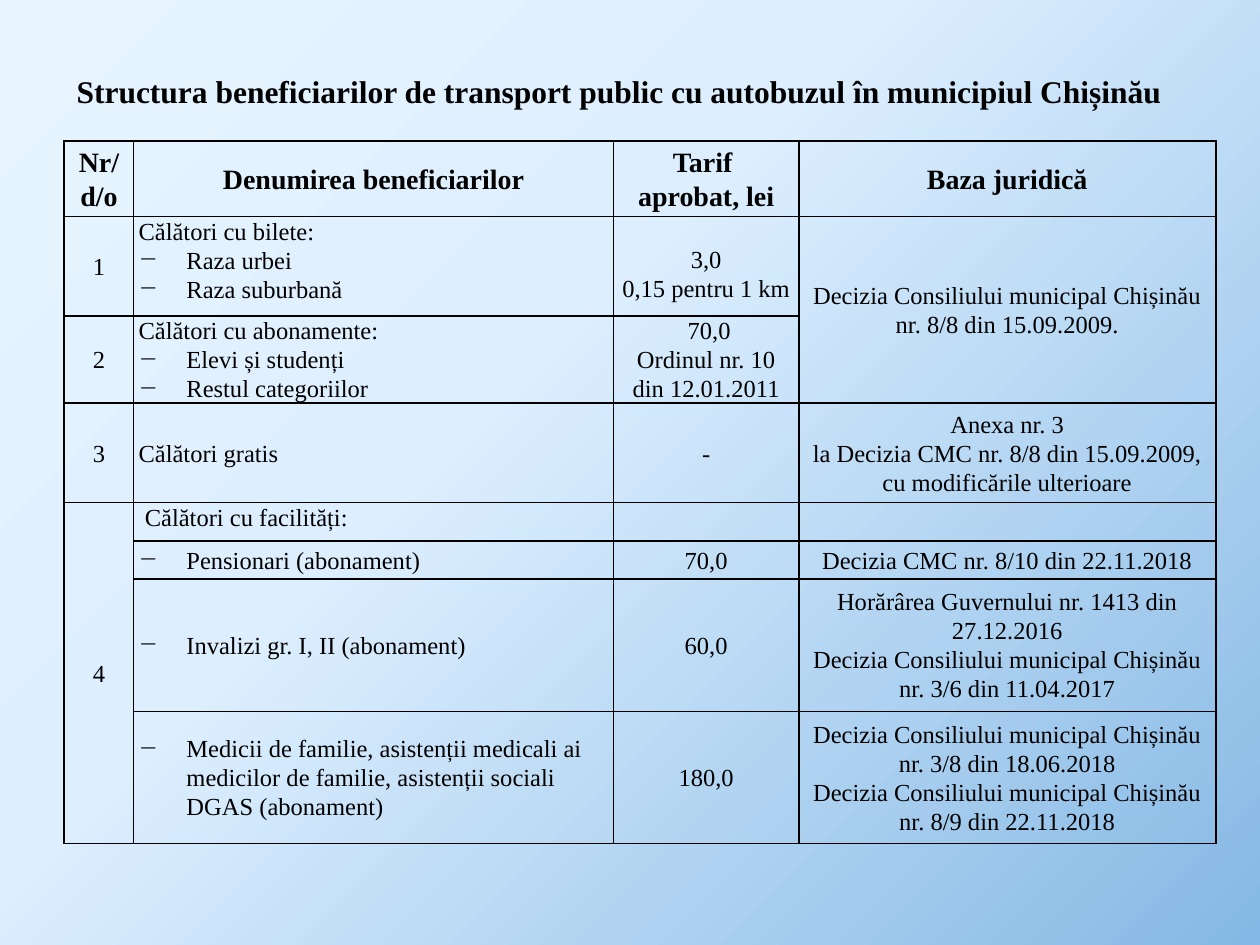
from dataclasses import dataclass

from lxml.etree import SubElement
from pptx import Presentation
from pptx.dml.color import RGBColor
from pptx.enum.text import MSO_ANCHOR as Anchor, MSO_AUTO_SIZE as AutoSize, PP_ALIGN as Align
from pptx.oxml import parse_xml
from pptx.oxml.ns import nsdecls, qn
from pptx.util import Inches, Pt


@dataclass(frozen=True)
class Theme:
    font: str = "Times New Roman"
    ink: str = "000000"
    gradient: tuple = ((0, "E8F4FF"), (40, "DDEFFF"), (100, "85B8E4"))
    title_size: int = 18
    header_size: int = 16
    body_size: int = 14
    border: float = 1
    line_spacing: float = 1.07
    cell_margin: float = 0.04
    bullet: str = "−"
    bullet_indent: float = 0.38


class SlideBuilder:
    def __init__(self, page, theme):
        self.page = page
        self.theme = theme

    def background(self):
        """Circular gradient centred beyond the top left corner."""
        self.page.background.fill.gradient()
        gradient = self.page.element.find(".//" + qn("a:gradFill"))
        stops = "".join(
            f'<a:gs pos="{place * 1000}"><a:srgbClr val="{color}"/></a:gs>'
            for place, color in self.theme.gradient)
        gradient.getparent().replace(gradient, parse_xml(
            f'<a:gradFill {nsdecls("a")} rotWithShape="1"><a:gsLst>{stops}</a:gsLst>'
            '<a:path path="circle"><a:fillToRect l="-24000" t="-20000" r="124000" b="120000"/>'
            '</a:path></a:gradFill>'))

    def style(self, para, size, bold=False):
        for span in para.runs:
            span.font.name = self.theme.font
            span.font.size = Pt(size)
            span.font.bold = bold
            span.font.color.rgb = RGBColor.from_string(self.theme.ink)

    def title(self, text, left, top, width, height):
        box = self.page.shapes.add_textbox(
            Inches(left), Inches(top), Inches(width), Inches(height))
        frame = box.text_frame
        frame.word_wrap = False
        frame.auto_size = AutoSize.SHAPE_TO_FIT_TEXT
        frame.text = text
        self.style(frame.paragraphs[0], self.theme.title_size, True)

    def table(self, left, top, widths, heights):
        frame = self.page.shapes.add_table(
            len(heights), len(widths), Inches(left), Inches(top),
            Inches(sum(widths)), Inches(sum(heights)))
        table = frame.table
        table.first_row = table.horz_banding = False
        for column, width in zip(table.columns, widths):
            column.width = Inches(width)
        for row, height in zip(table.rows, heights):
            row.height = Inches(height)
        for cell in table.iter_cells():
            self.frame_cell(cell)
        return table

    def frame_cell(self, cell):
        cell.fill.background()
        cell.margin_left = cell.margin_right = Inches(self.theme.cell_margin)
        cell.margin_top = cell.margin_bottom = 0
        cell.vertical_anchor = Anchor.MIDDLE
        props = cell._tc.get_or_add_tcPr()
        for place, side in enumerate(("lnL", "lnR", "lnT", "lnB")):
            props.insert(place, parse_xml(
                f'<a:{side} {nsdecls("a")} w="{Pt(self.theme.border)}"><a:solidFill>'
                f'<a:srgbClr val="{self.theme.ink}"/></a:solidFill></a:{side}>'))

    def fill_cell(self, cell, text, align, size, bold=False):
        """Lines that start with the bullet sign become list items."""
        lines = text.split("\n")
        cell.text_frame.text = "\n".join(
            line.removeprefix(self.theme.bullet) for line in lines)
        for line, para in zip(lines, cell.text_frame.paragraphs):
            para.alignment = align
            para.line_spacing = self.theme.line_spacing
            self.style(para, size, bold)
            if line.startswith(self.theme.bullet):
                self.bullet(para)

    def bullet(self, para):
        props = para._p.get_or_add_pPr()
        indent = Inches(self.theme.bullet_indent)
        props.set("marL", str(indent))
        props.set("indent", str(-indent))
        SubElement(props, qn("a:buChar")).set("char", self.theme.bullet)


HEADERS = ("Nr/ d/o", "Denumirea beneficiarilor", "Tarif \naprobat, lei", "Baza juridică")
ROWS = (
    ("1", "Călători cu bilete:\n−Raza urbei\n−Raza suburbană",
     "3,0\n0,15 pentru 1 km",
     "Decizia Consiliului municipal Chișinău nr. 8/8 din 15.09.2009."),
    ("2", "Călători cu abonamente:\n−Elevi și studenți\n−Restul categoriilor",
     " 70,0\nOrdinul nr. 10 din 12.01.2011", ""),
    ("3", "Călători gratis", "-",
     "Anexa nr. 3\nla Decizia CMC nr. 8/8 din 15.09.2009,\ncu modificările ulterioare"),
    ("4", "Călători cu facilități:", "", ""),
    ("", "−Pensionari (abonament)", "70,0", "Decizia CMC nr. 8/10 din 22.11.2018"),
    ("", "−Invalizi gr. I, II (abonament)", "60,0",
     "Horărârea Guvernului nr. 1413 din 27.12.2016\n"
     "Decizia Consiliului municipal Chișinău nr. 3/6 din 11.04.2017"),
    ("", "−Medicii de familie, asistenții medicali ai medicilor de familie, "
     "asistenții sociali DGAS (abonament)", "180,0",
     "Decizia Consiliului municipal Chișinău nr. 3/8 din 18.06.2018\n"
     "Decizia Consiliului municipal Chișinău nr. 8/9 din 22.11.2018"),
)
COLUMN_WIDTHS = (0.55, 3.81, 1.47, 3.31)
ROW_HEIGHTS = (0.6, 0.79, 0.69, 0.79, 0.3, 0.3, 1.05, 1.05)
JUSTIFIED_ROWS = (1, 2, 4, 5)
TOP_CELLS = ((1, 1), (1, 2), (2, 1), (2, 2), (4, 1))


def main():
    deck = Presentation()
    deck.slide_width, deck.slide_height = Inches(10), Inches(7.5)
    theme = Theme()
    builder = SlideBuilder(deck.slides.add_slide(deck.slide_layouts[6]), theme)
    builder.background()

    # Table grid and merged cells
    table = builder.table(0.51, 1.12, COLUMN_WIDTHS, ROW_HEIGHTS)
    table.cell(1, 3).merge(table.cell(2, 3))
    table.cell(4, 0).merge(table.cell(7, 0))

    # Header row
    for column, text in enumerate(HEADERS):
        builder.fill_cell(table.cell(0, column), text, Align.CENTER, theme.header_size, True)

    # Beneficiaries
    for row, texts in enumerate(ROWS, start=1):
        name_align = Align.JUSTIFY if row in JUSTIFIED_ROWS else Align.LEFT
        for column, text in enumerate(texts):
            if text:
                align = name_align if column == 1 else Align.CENTER
                builder.fill_cell(table.cell(row, column), text, align, theme.body_size)

    # Cells set from the top, the ticket prices level with their list items
    for row, column in TOP_CELLS:
        table.cell(row, column).vertical_anchor = Anchor.TOP
    table.cell(1, 2).margin_top = Inches(0.22)
    table.cell(4, 1).margin_left = Inches(theme.cell_margin + 0.05)

    # Title
    builder.title("Structura beneficiarilor de transport public cu autobuzul în municipiul Chișinău",
                  0.51, 0.52, 8.83, 0.4)
    deck.save("out.pptx")


if __name__ == "__main__":
    main()
